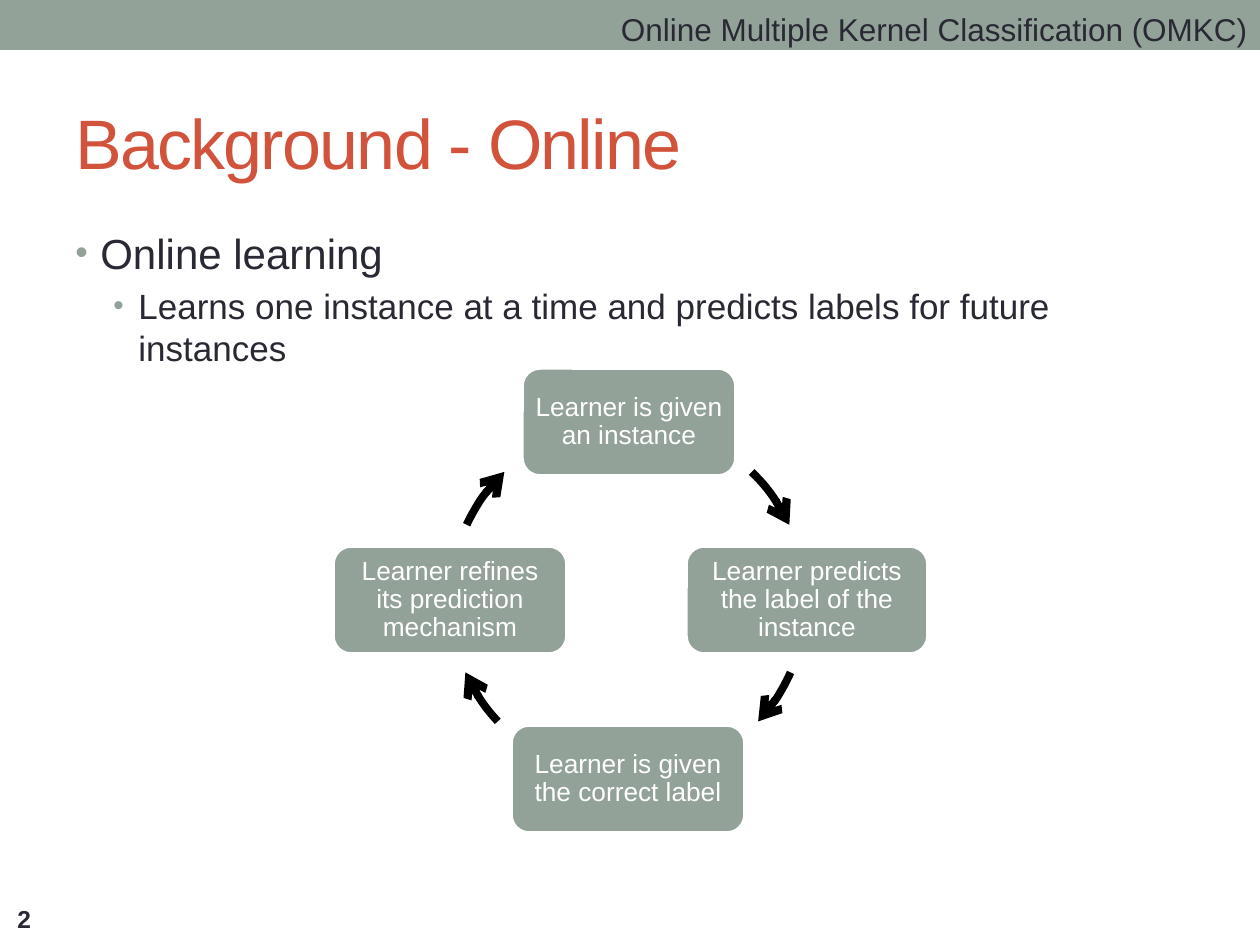
from pptx import Presentation
from pptx.dml.color import RGBColor
from pptx.enum.shapes import MSO_SHAPE as SHAPE
from pptx.enum.text import MSO_ANCHOR as ANCHOR, PP_ALIGN as ALIGN
from pptx.oxml.ns import qn
from pptx.util import Pt
from lxml.etree import SubElement

SCALE = 914400 / 126
SAGE = RGBColor(0x93, 0xA2, 0x99)
INK = RGBColor(0x29, 0x29, 0x34)
RUST = RGBColor(0xD2, 0x53, 0x3C)
WHITE = RGBColor(0xFF, 0xFF, 0xFF)
BLACK = RGBColor(0, 0, 0)

CYCLE_X, CYCLE_Y, CYCLE_R = 628, 600, 178
STEP_H = 108
STEPS = [
    ("Learner is given an instance", 522, 368, 214),
    ("Learner predicts the label of the instance", 686, 546, 242),
    ("Learner is given the correct label", 511, 725, 234),
    ("Learner refines its prediction mechanism", 333, 546, 234),
]
ARCS = [(314, 335), (24, 43), (137, 156), (205, 226)]


def px(n):
    return round(n * SCALE)


def box(*lengths):
    return [px(n) for n in lengths]


def style(p, size, color, bold=False):
    for r in p.runs:
        f = r.font
        f.name, f.size, f.bold = "Arial", Pt(size), bold
        f.color.rgb = color


def add_text(s, text, place, size, color, align=ALIGN.LEFT, anchor=ANCHOR.TOP, bold=False):
    tf = s.shapes.add_textbox(*box(*place)).text_frame
    tf.word_wrap = True
    tf.vertical_anchor = anchor
    tf.text = text
    for p in tf.paragraphs:
        p.alignment = align
        style(p, size, color, bold)
    return tf


def add_bullet(p, level, size, indent):
    p.level = level
    p.space_before = Pt(size * 0.2)
    style(p, size, INK)
    pPr = p._p.get_or_add_pPr()
    pPr.set("marL", str(px(indent)))
    pPr.set("indent", str(px(-25)))
    SubElement(SubElement(pPr, qn("a:buClr")), qn("a:srgbClr")).set("val", str(SAGE))
    SubElement(pPr, qn("a:buSzPct")).set("val", "85000")
    SubElement(pPr, qn("a:buFont")).set("typeface", "Arial")
    SubElement(pPr, qn("a:buChar")).set("char", "•")


def add_header(s):
    bar = s.shapes.add_shape(SHAPE.RECTANGLE, *box(0, 0, 1260, 50))
    bar.shadow.inherit = False
    bar.fill.solid()
    bar.fill.fore_color.rgb = SAGE
    bar.line.fill.background()
    add_text(s, "Online Multiple Kernel Classification (OMKC)", (546, 4, 714, 50),
             18, INK, ALIGN.RIGHT)


def add_body(s):
    tf = add_text(s, "Online learning\nLearns one instance at a time and predicts labels "
                  "for future instances", (63, 221, 1134, 672), 24, INK)
    for level, (p, size, indent) in enumerate(zip(tf.paragraphs, (24, 20), (25, 63))):
        add_bullet(p, level, size, indent)


def add_step(s, text, left, top, width):
    sp = s.shapes.add_shape(SHAPE.ROUNDED_RECTANGLE, *box(left, top, width, STEP_H))
    sp.shadow.inherit = False
    sp.fill.solid()
    sp.fill.fore_color.rgb = SAGE
    sp.line.color.rgb = WHITE
    sp.line.width = Pt(2.08)
    tf = sp.text_frame
    tf.word_wrap = True
    tf.vertical_anchor = ANCHOR.MIDDLE
    tf.margin_left = tf.margin_right = px(8)
    tf.margin_top = tf.margin_bottom = px(5)
    tf.text = text
    p = tf.paragraphs[0]
    p.alignment = ALIGN.CENTER
    p.line_spacing = 0.9
    style(p, 15, WHITE)


def add_arc_arrow(s, start, end):
    sp = s.shapes.add_shape(SHAPE.ARC, *box(CYCLE_X - CYCLE_R, CYCLE_Y - CYCLE_R,
                                            2 * CYCLE_R, 2 * CYCLE_R))
    sp.shadow.inherit = False
    for i, degrees in enumerate((start, end)):
        sp.adjustments[i] = degrees * 0.6
    sp.fill.background()
    sp.line.color.rgb = BLACK
    sp.line.width = Pt(4.5)
    SubElement(sp.line._get_or_add_ln(), qn("a:tailEnd")).set("type", "arrow")


def main():
    prs = Presentation()
    prs.slide_width, prs.slide_height = box(1260, 945)
    s = prs.slides.add_slide(prs.slide_layouts[6])
    add_header(s)
    title = add_text(s, "Background - Online", (63, 73, 1134, 136), 40, RUST,
                     anchor=ANCHOR.MIDDLE)
    title.paragraphs[0].runs[0].font._element.set("spc", "-100")
    add_body(s)
    for step, arc in zip(STEPS, ARCS):
        add_step(s, *step)
        add_arc_arrow(s, *arc)
    add_text(s, "2", (5, 896, 147, 45), 14, INK, anchor=ANCHOR.MIDDLE, bold=True)
    prs.save("out.pptx")


if __name__ == "__main__":
    main()
